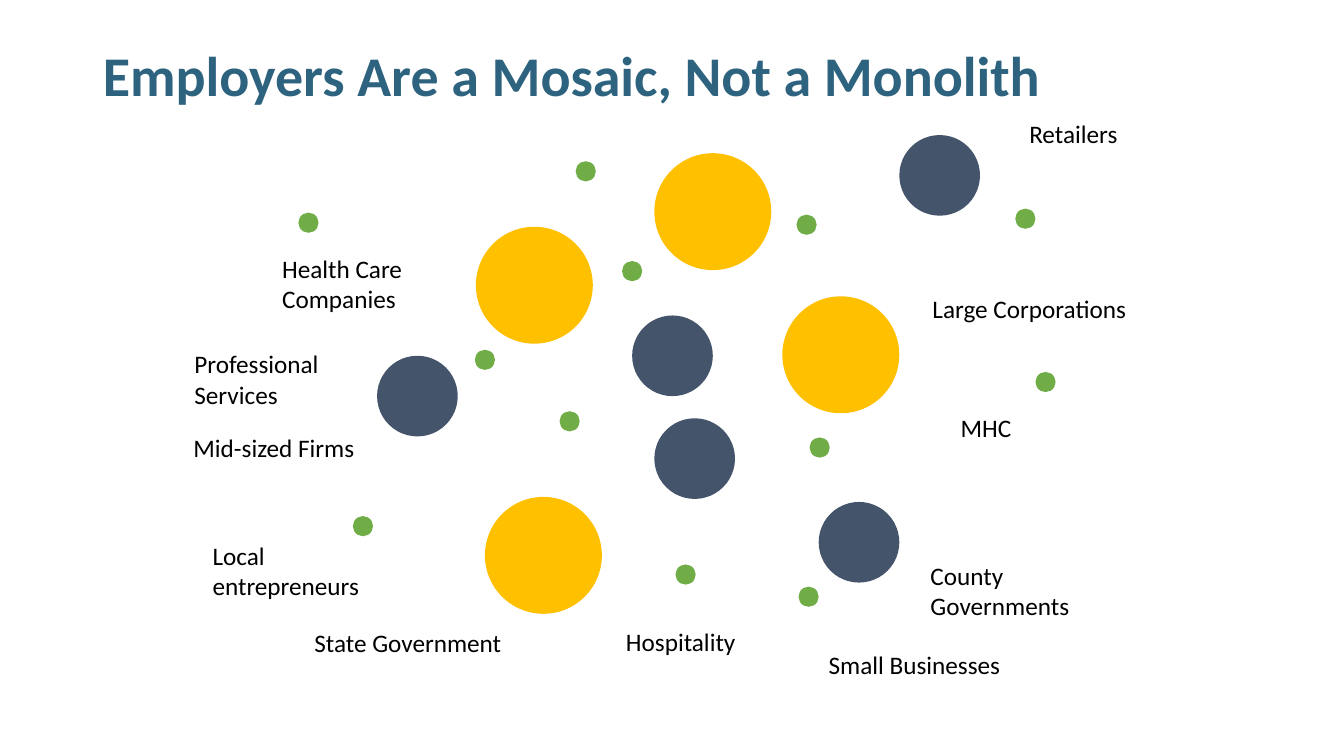
import pptx
import pptx.util
import pptx.dml.color
import pptx.enum.shapes
import pptx.enum.text

PX = 9144  # 100 px to the inch
FONT = "Calibri"

# Diameter, colour and top-left corners within the mosaic
CIRCLES = [
    (116, "FFC000", [(290, 113), (467, 40), (299, 381), (594, 182)]),
    (80, "44546A", [(445, 201), (710, 22), (467, 303), (630, 386), (192, 241)]),
    (20, "70AD47", [(289, 235), (373, 296), (168, 400), (389, 48),
                    (825, 95), (608, 101), (435, 147), (114, 99),
                    (488, 448), (610, 470), (621, 322), (845, 257)]),
]

# Text, left, top, width, height, wrap
LABELS = [
    ("Large Corporations", 733, 174, 215, 71, False),
    ("Small Businesses", 630, 527, 192, 71, False),
    ("Mid-sized Firms", 0, 312, 181, 71, False),
    ("State Government", 120, 505, 208, 71, False),
    ("County Governments", 731, 439, 201, 101, True),
    ("Health Care Companies", 88, 134, 155, 71, True),
    ("Retailers", 829, 0, 155, 40, True),
    ("MHC", 761, 292, 70, 40, True),
    ("Local entrepreneurs", 19, 419, 181, 71, True),
    ("Professional Services", 1, 229, 152, 71, True),
    ("Hospitality", 429, 504, 159, 40, True),
]


def px(*lengths):
    return [pptx.util.Emu(n * PX) for n in lengths]


def rgb(value):
    return pptx.dml.color.RGBColor.from_string(value)


def set_format(target, values):
    for name, value in values.items():
        setattr(target, name, value)


def write(p, text, size, color, bold=False):
    r = p.add_run()
    r.text = text
    set_format(r.font, {"name": FONT, "size": pptx.util.Pt(size), "bold": bold})
    r.font.color.rgb = rgb(color)


def add_title(s, box, text):
    sp = s.shapes.title
    set_format(sp, dict(zip(("left", "top", "width", "height"), px(*box))))
    tf = sp.text_frame
    set_format(tf, {"word_wrap": True,
                    "auto_size": pptx.enum.text.MSO_AUTO_SIZE.NONE,
                    "vertical_anchor": pptx.enum.text.MSO_ANCHOR.MIDDLE})
    p = tf.paragraphs[0]
    set_format(p, {"alignment": pptx.enum.text.PP_ALIGN.LEFT,
                   "line_spacing": 0.9})
    write(p, text, 40, "2E6380", True)


def add_mosaic(s, left, top):
    # Circles, largest first
    for size, color, corners in CIRCLES:
        for x, y in corners:
            sp = s.shapes.add_shape(pptx.enum.shapes.MSO_SHAPE.OVAL,
                                    *px(left + x, top + y, size, size))
            sp.shadow.inherit = False
            sp.fill.solid()
            sp.fill.fore_color.rgb = rgb(color)
            sp.line.fill.background()

    # Employer labels
    for text, x, y, width, height, wrap in LABELS:
        sp = s.shapes.add_textbox(*px(left + x, top + y, width, height))
        tf = sp.text_frame
        set_format(tf, {"word_wrap": wrap,
                        "auto_size": pptx.enum.text.MSO_AUTO_SIZE.SHAPE_TO_FIT_TEXT})
        write(tf.paragraphs[0], text, 18, "000000")


def main():
    prs = pptx.Presentation()
    prs.slide_width, prs.slide_height = px(1333, 750)
    s = prs.slides.add_slide(prs.slide_layouts[5])
    add_title(s, (92, 40, 1150, 75), "Employers Are a Mosaic, Not a Monolith")
    add_mosaic(s, 182, 112)
    prs.save("out.pptx")


if __name__ == "__main__":
    main()
